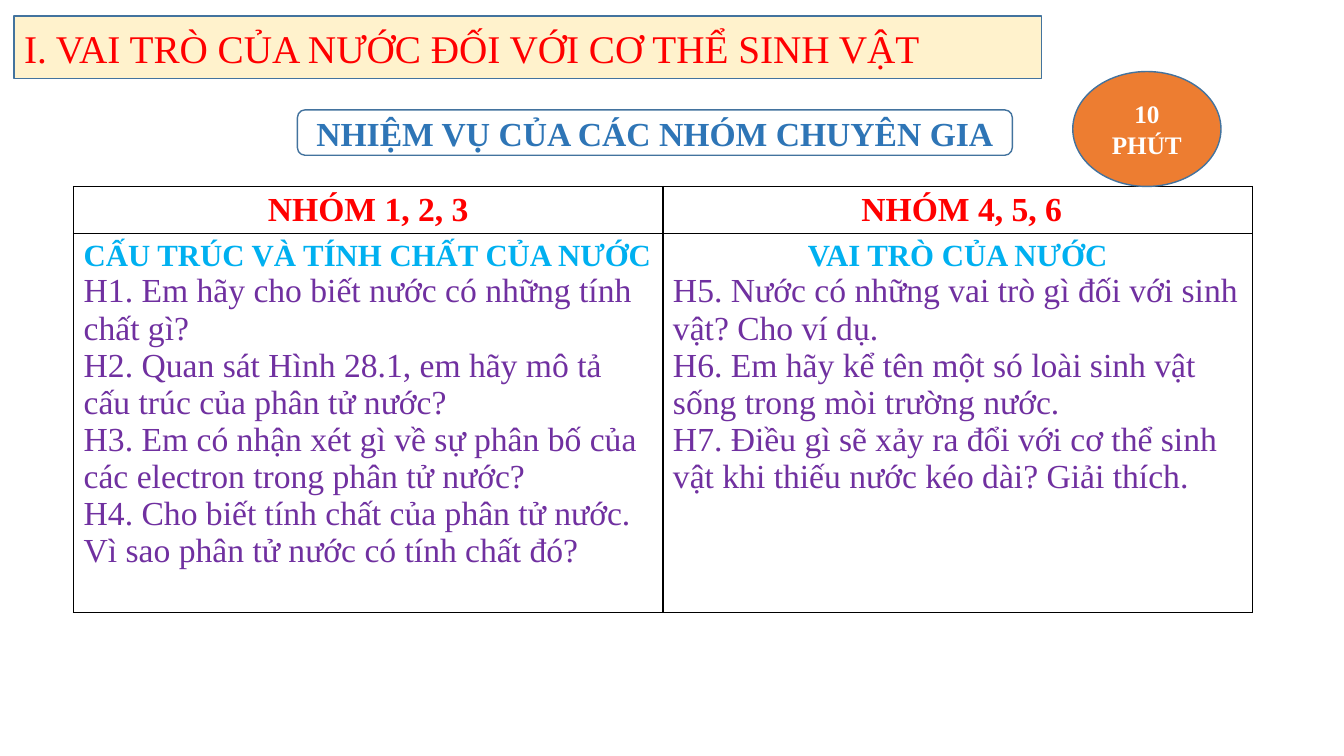
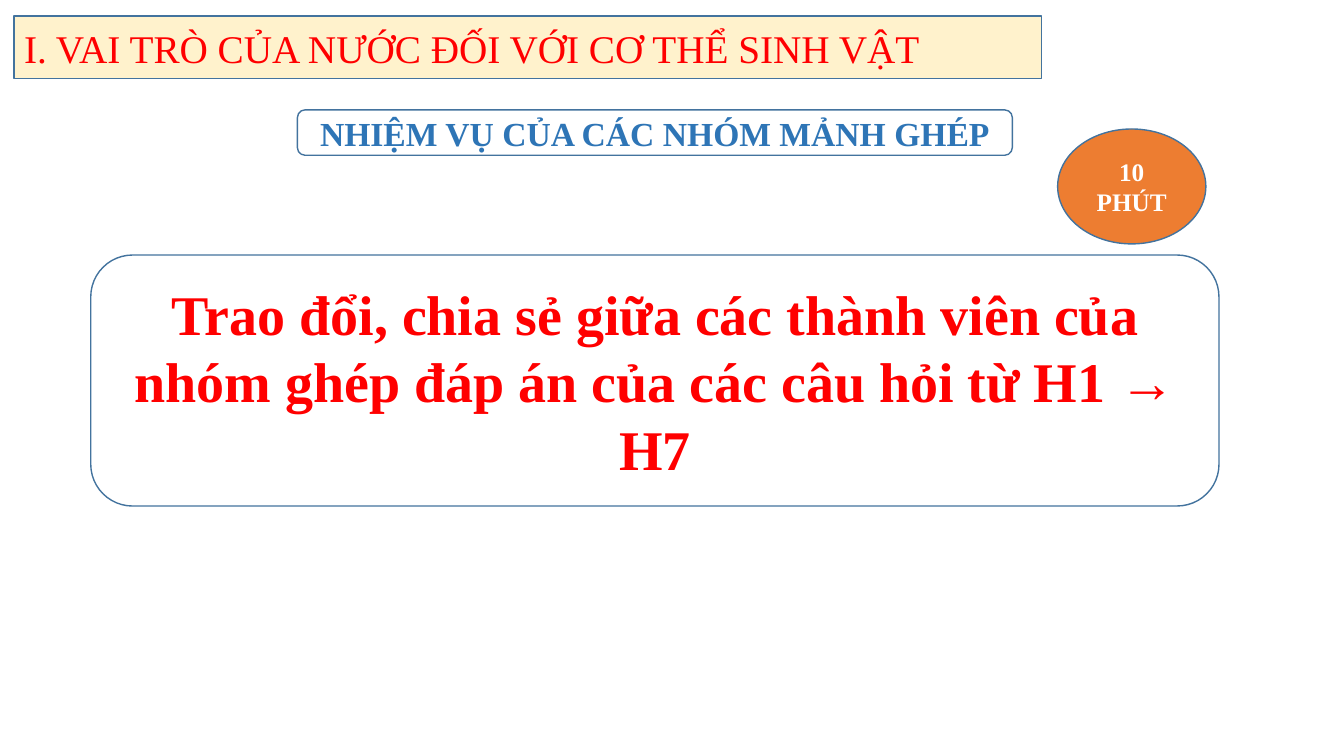
from lxml import etree
from pptx import Presentation
from pptx.dml.color import RGBColor
from pptx.enum.shapes import MSO_SHAPE
from pptx.enum.text import MSO_ANCHOR, PP_ALIGN
from pptx.oxml.ns import qn
from pptx.util import Inches, Pt

RECTANGLE, ROUNDED, OVAL = MSO_SHAPE.RECTANGLE, MSO_SHAPE.ROUNDED_RECTANGLE, MSO_SHAPE.OVAL
LEFT, CENTER = PP_ALIGN.LEFT, PP_ALIGN.CENTER
MIDDLE = MSO_ANCHOR.MIDDLE

FONT = "Times New Roman"
COLORS = {
    "white": "FFFFFF", "black": "000000", "cream": "FFF2CC", "orange": "ED7D31",
    "outline": "43739E", "red": "FF0000", "blue": "2E75B6", "sky": "00B0F0", "purple": "7030A0",
}
STYLES = {
    "title": {"size": 28, "color": "red", "bold": False, "align": LEFT},
    "task": {"size": 24, "color": "blue", "bold": True, "align": CENTER},
    "timer": {"size": 18, "color": "white", "bold": True, "align": CENTER},
    "message": {"size": 40, "color": "red", "bold": True, "align": CENTER},
    "group": {"size": 24, "color": "red", "bold": True, "align": CENTER},
    "topic": {"size": 22, "color": "sky", "bold": True, "align": LEFT},
    "centered_topic": {"size": 22, "color": "sky", "bold": True, "align": CENTER},
    "question": {"size": 24, "color": "purple", "bold": False, "align": LEFT},
}

TITLE = "I. VAI TRÒ CỦA NƯỚC ĐỐI VỚI CƠ THỂ SINH VẬT"
GROUPS = [
    ("NHÓM 1, 2, 3", "topic", "CẤU TRÚC VÀ TÍNH CHẤT CỦA NƯỚC", [
        "H1. Em hãy cho biết nước có những tính chất gì?",
        "H2. Quan sát Hình 28.1, em hãy mô tả cấu trúc của phân tử nước?",
        "H3. Em có nhận xét gì về sự phân bố của các electron trong phân tử nước?",
        "H4. Cho biết tính chất của phân tử nước. Vì sao phân tử nước có tính chất đó?",
    ]),
    (" NHÓM 4, 5, 6", "centered_topic", "VAI TRÒ CỦA NƯỚC", [
        "H5. Nước có những vai trò gì đối với sinh vật? Cho ví dụ.",
        "H6. Em hãy kể tên một só loài sinh vật sống trong mòi trường nước.",
        "H7. Điều gì sẽ xảy ra đổi với cơ thể sinh vật khi thiếu nước kéo dài? Giải thích.",
    ]),
]


def rgb(name):
    """Return the palette colour with the given name."""
    return RGBColor.from_string(COLORS[name])


def write(frame, lines):
    """Fill a text frame with (style, text) paragraphs."""
    frame.word_wrap = True
    for index, (style_name, text) in enumerate(lines):
        style = STYLES[style_name]
        para = frame.add_paragraph() if index else frame.paragraphs[0]
        para.alignment = style["align"]
        span = para.add_run()
        span.text = text
        formats = {"name": FONT, "size": Pt(style["size"]), "bold": style["bold"]}
        for key, value in formats.items():
            setattr(span.font, key, value)
        span.font.color.rgb = rgb(style["color"])


def add_panel(page, kind, box, fill, style, text):
    """Draw an outlined shape with one paragraph of text."""
    panel = page.shapes.add_shape(kind, *map(Inches, box))
    panel.shadow.inherit = False
    panel.fill.solid()
    panel.fill.fore_color.rgb = rgb(fill)
    panel.line.color.rgb = rgb("outline")
    panel.line.width = Pt(1)
    panel.text_frame.vertical_anchor = MIDDLE
    write(panel.text_frame, [(style, text)])


def add_header(page, task):
    """Draw the lesson title band and the task heading."""
    add_panel(page, RECTANGLE, (0.14, 0.16, 10.19, 0.62), "cream", "title", TITLE)
    add_panel(page, ROUNDED, (2.95, 1.09, 7.09, 0.45), "white", "task", task)


def add_timer(page, left, top):
    """Draw the time limit badge at the given corner."""
    add_panel(page, OVAL, (left, top, 1.47, 1.14), "orange", "timer", "10 PHÚT")


def format_cell(cell, lines):
    """Write a white table cell with black borders."""
    write(cell.text_frame, lines)
    properties = cell._tc.get_or_add_tcPr()
    for side in ("lnL", "lnR", "lnT", "lnB"):
        border = etree.SubElement(properties, qn(f"a:{side}"), w=str(Pt(1)))
        fill = etree.SubElement(border, qn("a:solidFill"))
        etree.SubElement(fill, qn("a:srgbClr"), val=COLORS["black"])
    cell.fill.solid()
    cell.fill.fore_color.rgb = rgb("white")


def add_group_table(page, box, header_height):
    """Draw the question table, one column for each set of groups."""
    left, top, width, height = box
    table = page.shapes.add_table(2, len(GROUPS), *map(Inches, box)).table
    table.horz_banding = False
    table.rows[0].height = Inches(header_height)
    table.rows[1].height = Inches(height - header_height)
    for index, (group, topic_style, topic, questions) in enumerate(GROUPS):
        table.columns[index].width = Inches(width / len(GROUPS))
        format_cell(table.cell(0, index), [("group", group)])
        lines = [(topic_style, topic)] + [("question", text) for text in questions]
        format_cell(table.cell(1, index), lines)


def build_expert_slide(page):
    """Build the slide with the tasks of the expert groups."""
    add_group_table(page, (0.73, 1.85, 11.69, 4.23), 0.47)
    add_header(page, "NHIỆM VỤ CỦA CÁC NHÓM CHUYÊN GIA")
    add_timer(page, 10.64, 0.71)


def build_jigsaw_slide(page):
    """Build the slide with the task of the jigsaw groups."""
    add_header(page, "NHIỆM VỤ CỦA CÁC NHÓM MẢNH GHÉP")
    add_timer(page, 10.49, 1.28)
    message = "Trao đổi, chia sẻ giữa các thành viên của nhóm ghép đáp án của các câu hỏi từ H1 → H7"
    add_panel(page, ROUNDED, (0.9, 2.53, 11.19, 2.49), "white", "message", message)


def main():
    """Build and save the deck."""
    deck = Presentation()
    deck.slide_width, deck.slide_height = Inches(13.33), Inches(7.5)
    for build in (build_expert_slide, build_jigsaw_slide):
        build(deck.slides.add_slide(deck.slide_layouts[6]))
    deck.save("out.pptx")


if __name__ == "__main__":
    main()
